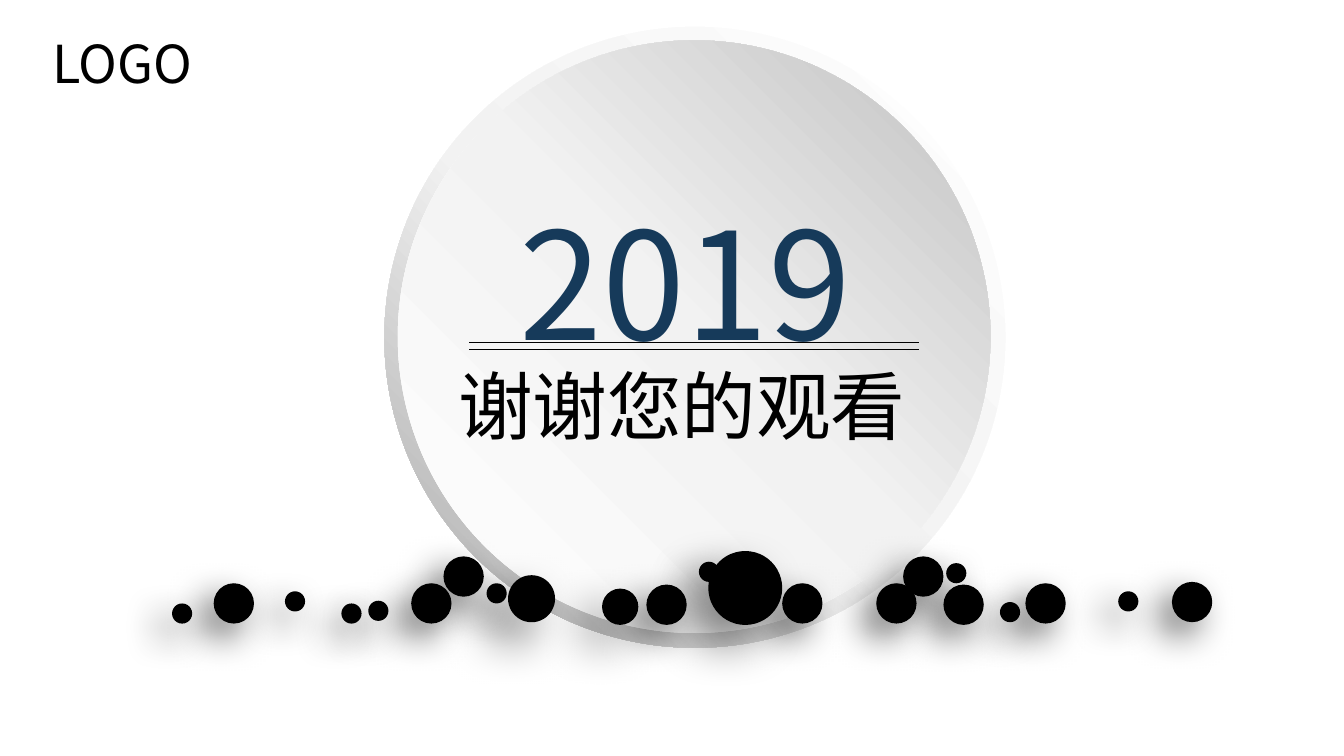
from copy import deepcopy
from dataclasses import dataclass

from lxml import etree
from pptx import Presentation
from pptx import util as u
from pptx.dml.color import RGBColor
from pptx.enum import shapes, text
from pptx.oxml.ns import qn


@dataclass(frozen=True)
class Theme:
    font: str = "Noto Sans CJK SC"
    ink: str = "000000"
    navy: str = "163A5A"
    rim: tuple = ((0, "FFFFFF"), (0.55, "F2F2F2"), (1, "A6A6A6"))
    face: tuple = ((0, "FFFFFF"), (0.51, "F2F2F2"), (1, "BFBFBF"))
    year_size: int = 80
    thanks_size: int = 40
    logo_size: int = 28
    rule_width: float = 0.75
    deep_shadow: tuple = (50, 25, 15)
    soft_shadow: tuple = (60, 20, 10)
    shadow_angle: int = 135


class ClosingSlide:
    def __init__(self, slide, theme):
        self.slide = slide
        self.theme = theme

    def round_shape(self, parent, kind, left, top, size):
        shape = parent.shapes.add_shape(
            kind, u.Inches(left), u.Inches(top), u.Inches(size), u.Inches(size))
        shape.shadow.inherit = False
        shape.line.fill.background()
        return shape

    def gradient_disc(self, parent, kind, left, top, size, stops, angle):
        disc = self.round_shape(parent, kind, left, top, size)
        disc.fill.gradient()
        stop_list = disc._element.spPr.find(".//" + qn("a:gsLst"))
        stop_list.append(deepcopy(stop_list[-1]))
        for stop, (position, color) in zip(disc.fill.gradient_stops, stops):
            stop.position = position
            stop.color.rgb = RGBColor.from_string(color)
        disc.fill.gradient_angle = angle
        return disc

    def dot(self, left, top, size, shadow):
        dot = self.round_shape(self.slide, shapes.MSO_SHAPE.OVAL, left, top, size)
        dot.fill.solid()
        dot.fill.fore_color.rgb = RGBColor.from_string(self.theme.ink)
        opacity, blur, distance = shadow
        effects = dot._element.spPr.find(qn("a:effectLst"))
        outer = etree.SubElement(
            effects, qn("a:outerShdw"), blurRad=str(u.Pt(blur)), dist=str(u.Pt(distance)),
            dir=str(self.theme.shadow_angle * 60000), algn="tr", rotWithShape="0")
        color = etree.SubElement(outer, qn("a:srgbClr"), val=self.theme.ink)
        etree.SubElement(color, qn("a:alpha"), val=str(opacity * 1000))

    def rule(self, left, right, y):
        rule = self.slide.shapes.add_connector(
            shapes.MSO_CONNECTOR.STRAIGHT,
            u.Inches(left), u.Inches(y), u.Inches(right), u.Inches(y))
        rule.line.color.rgb = RGBColor.from_string(self.theme.ink)
        rule.line.width = u.Pt(self.theme.rule_width)
        etree.SubElement(rule._element.spPr, qn("a:effectLst"))

    def label(self, words, left, top, width, height, size, color):
        box = self.slide.shapes.add_textbox(
            u.Inches(left), u.Inches(top), u.Inches(width), u.Inches(height))
        frame = box.text_frame
        frame.word_wrap = False
        frame.auto_size = text.MSO_AUTO_SIZE.SHAPE_TO_FIT_TEXT
        paragraph = frame.paragraphs[0]
        paragraph.text = words
        paragraph.font.size = u.Pt(size)
        paragraph.font.color.rgb = RGBColor.from_string(color)
        paragraph.font.name = self.theme.font
        defaults = paragraph._p.pPr.find(qn("a:defRPr"))
        etree.SubElement(defaults, qn("a:ea"), typeface=self.theme.font)


DOTS = [
    (5.27, 4.1, 0.55), (6.52, 4.34, 0.3), (3.06, 4.34, 0.3), (2.74, 4.47, 0.15),
    (7.02, 4.35, 0.3), (3.62, 4.34, 0.15), (7.44, 4.48, 0.15), (4.48, 4.38, 0.27),
    (7.63, 4.34, 0.3), (4.81, 4.35, 0.3), (8.32, 4.4, 0.15), (6.72, 4.14, 0.3),
    (2.54, 4.49, 0.15), (5.2, 4.18, 0.15), (3.78, 4.28, 0.35), (5.82, 4.34, 0.3),
    (1.59, 4.34, 0.3), (1.28, 4.49, 0.15), (3.3, 4.14, 0.3), (2.12, 4.4, 0.15),
    (7.04, 4.19, 0.15), (8.72, 4.33, 0.3),
]
SOFT_SIZES = (0.15, 0.3)


def main():
    deck = Presentation()
    deck.slide_width = u.Inches(10)
    deck.slide_height = deck.slide_width * 9 // 16
    theme = Theme()
    closing = ClosingSlide(deck.slides.add_slide(deck.slide_layouts[6]), theme)

    medallion = closing.slide.shapes.add_group_shape()
    rim = closing.gradient_disc(
        medallion, shapes.MSO_SHAPE.DONUT, 2.86, 0.2, 4.62, theme.rim, 225)
    rim.adjustments[0] = 0.05
    closing.gradient_disc(
        medallion, shapes.MSO_SHAPE.OVAL, 2.96, 0.3, 4.41, theme.face, 45)

    closing.label("谢谢您的观看", 3.31, 2.63, 3.57, 0.77, theme.thanks_size, theme.ink)
    for y in (2.55, 2.6):
        closing.rule(3.49, 6.84, y)
    closing.label("2019", 3.77, 1.37, 2.69, 1.45, theme.year_size, theme.navy)

    for left, top, size in DOTS:
        shadow = theme.soft_shadow if size in SOFT_SIZES else theme.deep_shadow
        closing.dot(left, top, size, shadow)

    closing.label("LOGO", 0.29, 0.18, 1.33, 0.57, theme.logo_size, theme.ink)
    deck.save("out.pptx")


if __name__ == "__main__":
    main()
